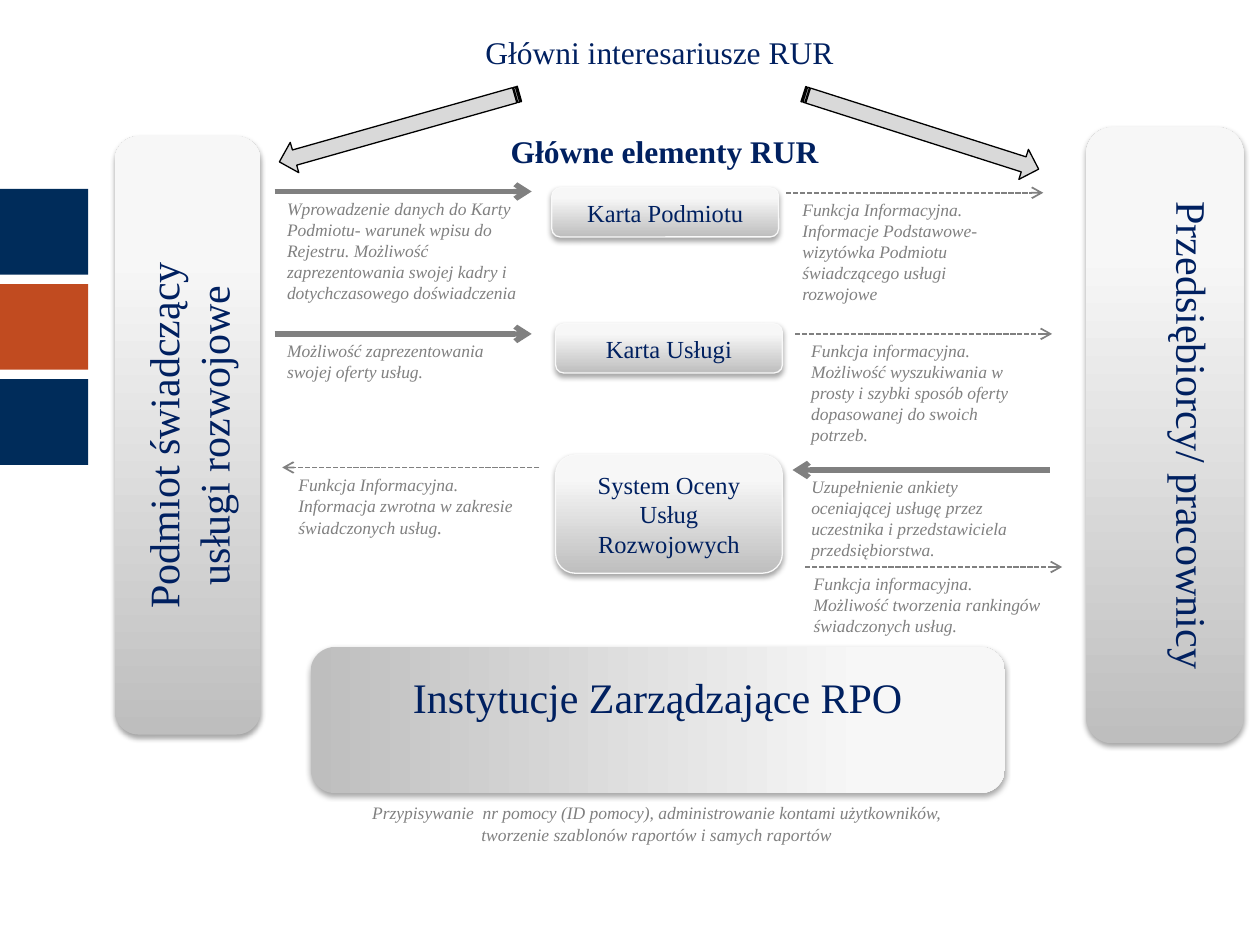
from copy import deepcopy

from lxml import etree
from pptx import Presentation
from pptx.dml.color import RGBColor
from pptx.enum.dml import MSO_LINE
from pptx.enum.shapes import MSO_CONNECTOR, MSO_SHAPE
from pptx.enum.text import MSO_ANCHOR, MSO_AUTO_SIZE, PP_ALIGN
from pptx.oxml.ns import qn
from pptx.util import Inches, Pt

ROUNDED, RECTANGLE = MSO_SHAPE.ROUNDED_RECTANGLE, MSO_SHAPE.RECTANGLE
STRIPED_ARROW = MSO_SHAPE.STRIPED_RIGHT_ARROW
CENTER, LEFT = PP_ALIGN.CENTER, PP_ALIGN.LEFT
TOP, MIDDLE = MSO_ANCHOR.TOP, MSO_ANCHOR.MIDDLE

WIDTH, HEIGHT = Inches(10), Inches(7.5)
COLUMN, ROW = WIDTH // 100, HEIGHT // 75
FONT = "Times New Roman"
COLORS = {
    "navy": "002060", "gray": "808080", "black": "000000",
    "block": "002C5A", "orange": "C14B20", "arrow": "D9D9D9",
    "dark": "BEBEBE", "light": "F7F7F7", "pale": "F8F8F8", "edge": "F9F9F9",
}
FLOW_COLUMNS = 20.4


def color(name):
    return RGBColor.from_string(COLORS[name])


def place(left, top, width, height):
    """Turn grid columns and rows into slide lengths."""
    return [round(left * COLUMN), round(top * ROW),
            round(width * COLUMN), round(height * ROW)]


def write(shape, lines, size, name="navy", align=CENTER, anchor=MIDDLE,
          bold=False, italic=False):
    frame = shape.text_frame
    frame.word_wrap = True
    frame.vertical_anchor = anchor
    for index, line in enumerate(lines):
        para = frame.add_paragraph() if index else frame.paragraphs[0]
        para.add_run().text = line
        para.alignment = align
        para.font.name, para.font.size = FONT, Pt(size)
        para.font.bold, para.font.italic = bold, italic
        para.font.color.rgb = color(name)
    return frame


def add_label(page, box, text, size, **style):
    label = page.shapes.add_textbox(*place(*box))
    frame = write(label, [text], size, anchor=TOP, **style)
    frame.auto_size = MSO_AUTO_SIZE.SHAPE_TO_FIT_TEXT
    return frame


def add_note(page, box, text, align=LEFT):
    return add_label(page, box, text, 10, name="gray", align=align, italic=True)


def add_title(page, box, text):
    title = page.shapes.title
    title.left, title.top, title.width, title.height = place(*box)
    write(title, [text], 18)


def add_side_blocks(page, box):
    """Stack three equal blocks with a gap of a tenth of their pitch."""
    left, top, width, height = box
    pitch = height / 2.9
    for index, name in enumerate(("block", "orange", "block")):
        block = page.shapes.add_shape(
            RECTANGLE, *place(left, top + index * pitch, width, pitch * 0.9))
        block.shadow.inherit = False
        block.fill.solid()
        block.fill.fore_color.rgb = color(name)
        block.line.fill.background()


def add_striped_arrow(page, box, angle):
    arrow = page.shapes.add_shape(STRIPED_ARROW, *place(*box))
    arrow.rotation = angle
    arrow.shadow.inherit = False
    arrow.fill.solid()
    arrow.fill.fore_color.rgb = color("arrow")
    arrow.line.color.rgb = color("black")
    arrow.line.width = Pt(0.75)


def add_panel(page, box):
    """Add a rounded panel, dark at its foot, with a soft shadow."""
    panel = page.shapes.add_shape(ROUNDED, *place(*box))
    panel.fill.gradient()
    panel.fill.gradient_angle = 90
    properties = panel._element.spPr
    stop_list = properties.find(".//" + qn("a:gsLst"))
    stop_list.append(deepcopy(stop_list[-1]))
    stops = zip(panel.fill.gradient_stops,
                (("dark", 0), ("light", 0.8), ("pale", 1)))
    for stop, (name, position) in stops:
        stop.color.rgb = color(name)
        stop.position = position
    panel.line.fill.background()
    panel.shadow.inherit = False
    shadow = etree.SubElement(
        properties.find(qn("a:effectLst")), qn("a:outerShdw"),
        blurRad=str(Pt(3.1)), dist=str(Pt(1.8)), dir="5400000", rotWithShape="0")
    shade = etree.SubElement(shadow, qn("a:srgbClr"), val=COLORS["black"])
    etree.SubElement(shade, qn("a:alpha"), val="35000")
    return panel


def add_card(page, box, text):
    card = add_panel(page, box)
    card.line.color.rgb = color("edge")
    card.line.width = Pt(0.75)
    write(card, [text], 14)


def add_party(page, box, lines, direction, angle=0, anchor=MIDDLE):
    """Add a tall panel whose text runs along its height."""
    party = add_panel(page, box)
    party.rotation = angle
    frame = write(party, lines, 24, anchor=anchor)
    frame.margin_left = frame.margin_right = Inches(0.14)
    frame._txBody.bodyPr.set("vert", direction)


def add_flow(page, box, text, solid, leftward=False, indent=0):
    """Draw an arrow along the top of the box and its note below."""
    left, top, width, height = box
    ends = [left, left + FLOW_COLUMNS]
    if leftward:
        ends.reverse()
    y = round(top * ROW)
    arrow = page.shapes.add_connector(
        MSO_CONNECTOR.STRAIGHT,
        round(ends[0] * COLUMN), y, round(ends[1] * COLUMN), y)
    arrow.line.color.rgb = color("gray")
    arrow.line.width = Pt(3 if solid else 1)
    if not solid:
        arrow.line.dash_style = MSO_LINE.SQUARE_DOT
    etree.SubElement(arrow.line._get_or_add_ln(), qn("a:tailEnd"), type="arrow")
    etree.SubElement(arrow._element.spPr, qn("a:effectLst"))
    return add_note(page, (left + indent, top, width, height), text)


def build_page(page):
    add_side_blocks(page, (0, 15, 7, 21.9))
    add_title(page, (29.5, 2.1, 45.7, 4), "Główni interesariusze RUR")
    add_striped_arrow(page, (21.8, 8.9, 19.8, 2.5), 164.2)
    add_striped_arrow(page, (63.3, 9.2, 19.6, 2.5), 17.7)
    add_label(page, (37.8, 10, 29.9, 4), "Główne elementy RUR", 18, bold=True)

    add_card(page, (43.8, 14.9, 18, 3.9), "Karta Podmiotu")
    add_card(page, (44.1, 25.7, 18, 3.9), "Karta Usługi")
    add_card(page, (44.1, 36.1, 18, 9.4), "System Oceny Usług Rozwojowych")

    add_flow(page, (21.8, 15.2, 20.3, 9.4),
             "Wprowadzenie danych do Karty Podmiotu- warunek wpisu do Rejestru. "
             "Możliwość zaprezentowania swojej kadry i dotychczasowego "
             "doświadczenia", solid=True)
    add_flow(page, (62.4, 15.3, 18.3, 9.4),
             "Funkcja Informacyjna. Informacje Podstawowe- wizytówka Podmiotu "
             "świadczącego usługi rozwojowe", solid=False, indent=0.3)
    add_flow(page, (21.8, 26.5, 19.8, 4.4),
             "Możliwość zaprezentowania swojej oferty usług.", solid=True)
    add_flow(page, (63.1, 26.5, 18.3, 9.4),
             "Funkcja informacyjna. Możliwość wyszukiwania w prosty i szybki "
             "sposób oferty dopasowanej do swoich potrzeb.",
             solid=False, indent=0.3)
    add_flow(page, (62.9, 37.3, 19.9, 7.7),
             "Uzupełnienie ankiety oceniającej usługę przez uczestnika i "
             "przedstawiciela przedsiębiorstwa.",
             solid=True, leftward=True, indent=0.5)
    feedback = add_flow(page, (22.4, 37.1, 20.3, 6.2),
                        "Funkcja Informacyjna. Informacja zwrotna w zakresie "
                        "świadczonych usług",
                        solid=False, leftward=True, indent=0.3)
    full_stop = feedback.paragraphs[0].add_run()
    full_stop.text = "."
    full_stop.font.size = Pt(11)
    add_flow(page, (63.9, 45, 20, 6.1),
             "Funkcja informacyjna. Możliwość tworzenia rankingów "
             "świadczonych usług.", solid=False, indent=-0.3)

    add_party(page, (9.1, 10.8, 11.6, 47.5),
              ["Podmiot świadczący", "usługi rozwojowe"], "vert270")
    add_party(page, (86.2, 10.1, 12.5, 48.9),
              ["Przedsiębiorcy/ pracownicy"], "vert", anchor=TOP)
    add_party(page, (46.4, 29.6, 11.6, 55.1),
              ["Instytucje Zarządzające RPO"], "vert270", angle=90, anchor=TOP)
    add_note(page, (26.1, 63.2, 52, 4.4),
             "Przypisywanie  nr pomocy (ID pomocy), administrowanie kontami "
             "użytkowników, tworzenie szablonów raportów i samych raportów",
             align=CENTER)


def main():
    deck = Presentation()
    deck.slide_width, deck.slide_height = WIDTH, HEIGHT
    build_page(deck.slides.add_slide(deck.slide_layouts[5]))
    deck.save("out.pptx")


if __name__ == "__main__":
    main()
